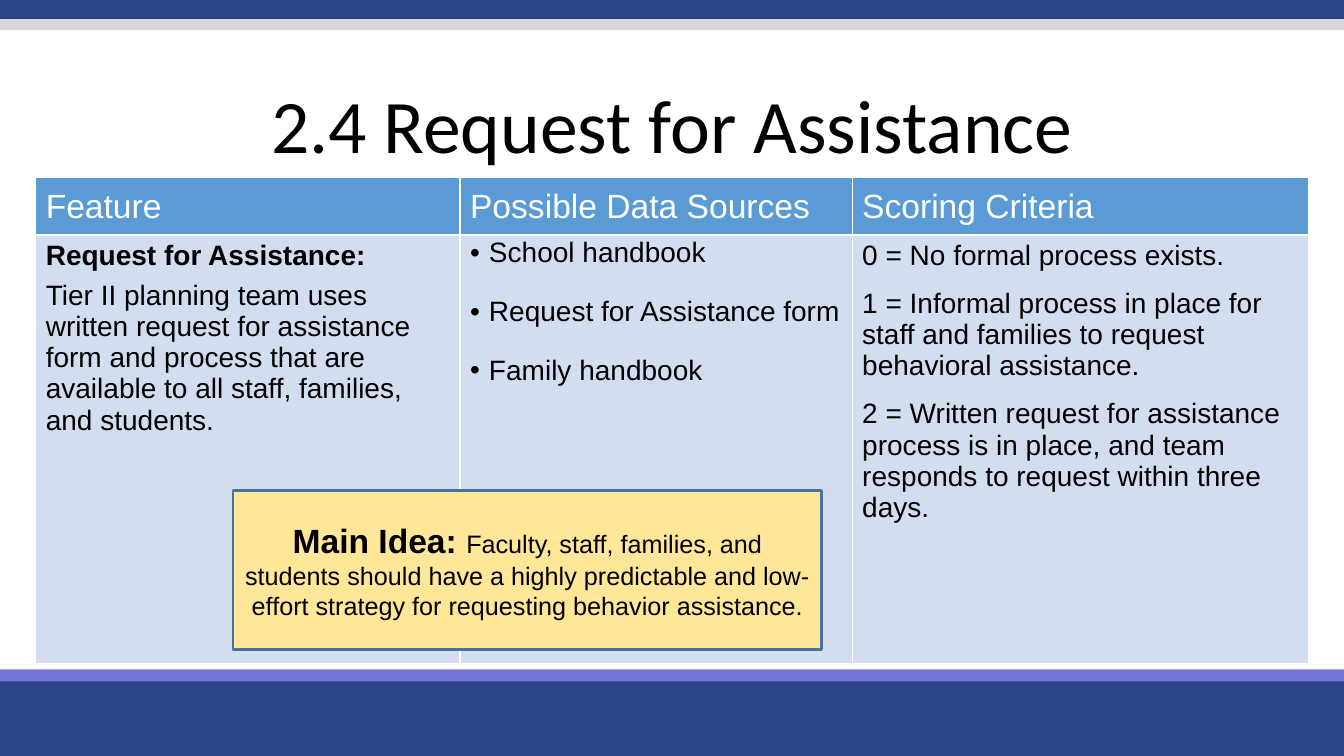
from lxml import etree
from pptx import Presentation
from pptx.dml.color import RGBColor
from pptx.enum.shapes import MSO_SHAPE
from pptx.enum.text import MSO_ANCHOR, PP_ALIGN
from pptx.oxml.ns import qn
from pptx.util import Pt

RECT = MSO_SHAPE.RECTANGLE
MIDDLE, TOP = MSO_ANCHOR.MIDDLE, MSO_ANCHOR.TOP
CENTER = PP_ALIGN.CENTER

NAVY = RGBColor(0x2E, 0x44, 0x88)
VIOLET = RGBColor(0x74, 0x76, 0xDA)
GREY = RGBColor(0xD8, 0xD8, 0xD8)
BLUE = RGBColor(0x5B, 0x9B, 0xD5)
PALE = RGBColor(0xD2, 0xDE, 0xEF)
CREAM = RGBColor(0xFF, 0xE6, 0x99)
STEEL = RGBColor(0x43, 0x73, 0x9E)
BLACK = RGBColor(0, 0, 0)
WHITE = RGBColor(0xFF, 0xFF, 0xFF)

WIDTH, HEIGHT = 960, 540
BANDS = [
    (482.4, 57.6, NAVY),
    (478.1, 8.6, VIOLET),
    (0, 13.7, NAVY),
    (13.7, 7.9, GREY),
]
COLS = [303.1, 280.1, 325.8]
ROWS = [41, 306]
HEADS = ["Feature", "Possible Data Sources", "Scoring Criteria"]
FEATURE = [
    "Request for Assistance:",
    "Tier II planning team uses written request for assistance form and "
    "process that are available to all staff, families, and students.",
]
SOURCES = ["School handbook", "Request for Assistance form", "Family handbook"]
SCORES = [
    "0 = No formal process exists.",
    "1 = Informal process in place for staff and families to request "
    "behavioral assistance.",
    "2 = Written request for assistance process is in place, and team "
    "responds to request within three days.",
]
IDEA = [
    ("Main Idea: ", 24, True),
    ("Faculty, staff, families, and students should have a highly predictable "
     "and low-effort strategy for requesting behavior assistance.", 18, False),
]


def style(run, size, color=BLACK, bold=False, face="Arial"):
    """Set the font of a run."""
    font = run.font
    font.name, font.size, font.bold = face, Pt(size), bold
    font.color.rgb = color


def add_rect(slide, left, top, width, height, fill):
    """Add a plain filled rectangle without outline."""
    rect = slide.shapes.add_shape(RECT, Pt(left), Pt(top), Pt(width), Pt(height))
    rect.shadow.inherit = False
    rect.fill.solid()
    rect.fill.fore_color.rgb = fill
    rect.line.fill.background()
    return rect


def add_title(slide, text):
    """Add the centred slide title."""
    box = slide.shapes.add_textbox(0, Pt(49.7), Pt(WIDTH), Pt(85))
    frame = box.text_frame
    frame.word_wrap = True
    frame.vertical_anchor = MIDDLE
    frame.text = text
    para = frame.paragraphs[0]
    para.alignment = CENTER
    para.line_spacing = 0.9
    style(para.runs[0], 54, face="Calibri")


def add_edges(cell):
    """Draw thin white borders around a cell."""
    props = cell._tc.get_or_add_tcPr()
    for side in ("a:lnL", "a:lnR", "a:lnT", "a:lnB"):
        line = etree.SubElement(props, qn(side), w=str(Pt(1)))
        solid = etree.SubElement(line, qn("a:solidFill"))
        etree.SubElement(solid, qn("a:srgbClr"), val=str(WHITE))


def fill_cell(cell, lines, size, color, fill, anchor=TOP, after=0):
    """Fill a cell with one paragraph per line, spaced apart by after."""
    add_edges(cell)
    cell.fill.solid()
    cell.fill.fore_color.rgb = fill
    cell.vertical_anchor = anchor
    cell.text_frame.text = "\n".join(lines)
    paras = cell.text_frame.paragraphs
    for para in paras:
        style(para.runs[0], size, color)
    for para in paras[:-1]:
        para.space_after = Pt(after)


def add_bullets(cell):
    """Turn the paragraphs of a cell into a bullet list."""
    for pos, para in enumerate(cell.text_frame.paragraphs):
        props = para._p.get_or_add_pPr()
        props.set("marL", str(Pt(13.5)))
        props.set("indent", str(-Pt(13.5)))
        etree.SubElement(props, qn("a:buFont"), typeface="Arial")
        etree.SubElement(props, qn("a:buChar"), char="•")
        para.line_spacing = 0.9
        if pos:
            para.space_before = Pt(10)


def add_grid(slide):
    """Add the table of feature, sources and scores."""
    frame = slide.shapes.add_table(
        len(ROWS), len(COLS), Pt(25.5), Pt(126.9), Pt(sum(COLS)), Pt(sum(ROWS)))
    table = frame.table
    table.horz_banding = False
    for col, width in zip(table.columns, COLS):
        col.width = Pt(width)
    for row, height in zip(table.rows, ROWS):
        row.height = Pt(height)
    bodies = [(FEATURE, 6), (SOURCES, 12), (SCORES, 12)]
    for col, (head, (lines, after)) in enumerate(zip(HEADS, bodies)):
        fill_cell(table.cell(0, col), [head], 24, WHITE, BLUE, MIDDLE)
        fill_cell(table.cell(1, col), lines, 20, BLACK, PALE, after=after)
    table.cell(1, 0).text_frame.paragraphs[0].runs[0].font.bold = True
    add_bullets(table.cell(1, 1))


def add_idea(slide):
    """Add the framed box with the main idea."""
    box = add_rect(slide, 166.5, 350.5, 420.5, 113.5, CREAM)
    box.line.color.rgb = STEEL
    box.line.width = Pt(2)
    frame = box.text_frame
    frame.word_wrap = True
    frame.vertical_anchor = MIDDLE
    para = frame.paragraphs[0]
    para.alignment = CENTER
    for text, size, bold in IDEA:
        run = para.add_run()
        run.text = text
        style(run, size, bold=bold)


def main():
    """Build and save the slide."""
    deck = Presentation()
    deck.slide_width, deck.slide_height = Pt(WIDTH), Pt(HEIGHT)
    slide = deck.slides.add_slide(deck.slide_layouts[6])
    for top, height, fill in BANDS:
        add_rect(slide, 0, top, WIDTH, height, fill)
    add_title(slide, "2.4 Request for Assistance")
    add_grid(slide)
    add_idea(slide)
    deck.save("out.pptx")


if __name__ == "__main__":
    main()
